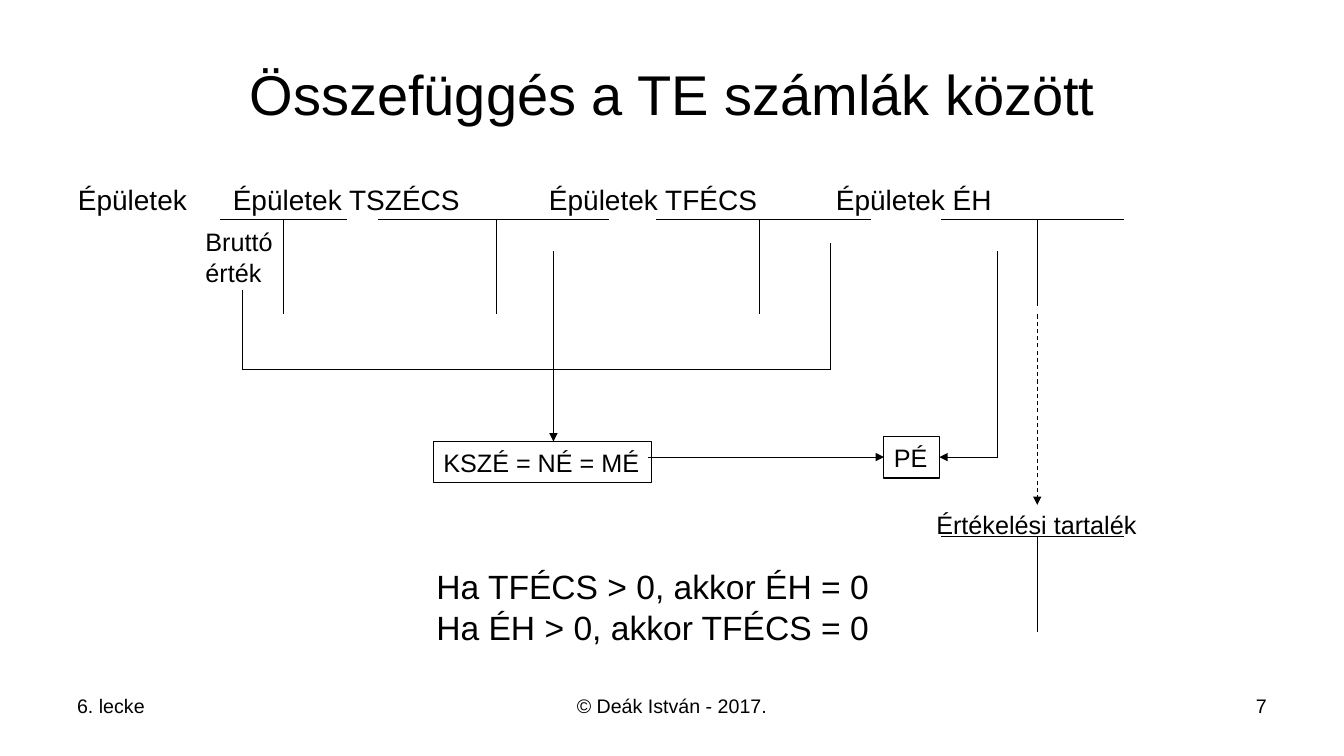
from dataclasses import dataclass

from lxml.etree import SubElement
from pptx import Presentation
from pptx.dml.color import RGBColor
from pptx.enum.dml import MSO_LINE_DASH_STYLE as Dash
from pptx.enum.shapes import MSO_CONNECTOR as Connector, MSO_SHAPE as Shape
from pptx.enum.text import MSO_ANCHOR as Anchor, PP_ALIGN as Align
from pptx.oxml.ns import qn
from pptx.util import Pt

COLORS = {"ink": "000000", "paper": "FFFFFF"}
FONT = "Arial"
INK = RGBColor.from_string(COLORS["ink"])


@dataclass
class Label:
    lines: list[str]
    left: float
    top: float
    width: float
    height: float
    size: float = 18
    align: Align = Align.LEFT
    wrap: bool = False


@dataclass
class Account:
    left: float
    right: float
    top: float
    stem: float
    bottom: float


@dataclass
class Line:
    x1: float
    y1: float
    x2: float
    y2: float
    arrow: bool = False
    dashed: bool = False


def write(shape, lines: list[str], size: float, align: Align, wrap: bool) -> None:
    frame = shape.text_frame
    frame.word_wrap = wrap
    frame.text = "\n".join(lines)
    for paragraph in frame.paragraphs:
        paragraph.alignment = align
        paragraph.font.size = Pt(size)
        paragraph.font.name = FONT
        paragraph.font.color.rgb = INK


def add_label(slide, label: Label, framed: bool = False):
    area = [Pt(v) for v in (label.left, label.top, label.width, label.height)]
    if framed:
        shape = slide.shapes.add_shape(Shape.RECTANGLE, *area)
        shape.shadow.inherit = False
        shape.fill.background()
        shape.line.color.rgb = INK
        shape.line.width = Pt(0.75)
    else:
        shape = slide.shapes.add_textbox(*area)
    write(shape, label.lines, label.size, label.align, label.wrap)
    return shape


def add_line(slide, line: Line):
    ends = [Pt(v) for v in (line.x1, line.y1, line.x2, line.y2)]
    connector = slide.shapes.add_connector(Connector.STRAIGHT, *ends)
    connector.line.color.rgb = INK
    connector.line.width = Pt(0.75)
    if line.dashed:
        connector.line.dash_style = Dash.DASH
    if line.arrow:
        SubElement(connector.line._get_or_add_ln(), qn("a:tailEnd"), type="triangle")
    SubElement(connector._element.spPr, qn("a:effectLst"))
    return connector


def add_account(slide, account: Account) -> None:
    add_line(slide, Line(account.left, account.top, account.right, account.top))
    add_line(slide, Line(account.stem, account.top, account.stem, account.bottom))


BAR = 157        # top bar of the T accounts
BRACKET = 264    # line that joins the three balances
FLOW = 326.5     # height of the arrows into PÉ

HEADINGS = [
    Label(["Épületek"], 48.5, 127, 110, 31, 20, wrap=True),
    Label(["Épületek TSZÉCS"], 159.2, 127, 200, 31, 20, wrap=True),
    Label(["Épületek TFÉCS"], 385, 127, 190, 31, 20, wrap=True),
    Label(["Épületek ÉH"], 590, 127, 160, 31, 20, wrap=True),
]
ACCOUNTS = [
    Account(157, 247.7, BAR, 202.3, 224.6),
    Account(270, 434.9, BAR, 355, 224.6),
    Account(468.7, 622, BAR, 542.2, 224.6),
    Account(672.5, 802.8, BAR, 740.9, 218.9),
    Account(672.5, 802.8, 383.2, 740.9, 451.4),
]
NOTES = [
    Label(["Bruttó", "érték"], 139.7, 158.4, 62.6, 50.4),
    Label(["Értékelési tartalék"], 661.7, 360, 157.7, 29),
    Label(["Ha TFÉCS > 0, akkor ÉH = 0", "Ha ÉH > 0, akkor TFÉCS = 0"],
          304.6, 401, 326.2, 65.5, 24),
]
FOOTERS = [
    Label(["6. lecke"], 48, 491.8, 224, 37.5, 14, wrap=True),
    Label(["© Deák István - 2017."], 328, 491.8, 304, 37.5, 14, Align.CENTER, True),
    Label(["7"], 688, 491.8, 224, 37.5, 14, Align.RIGHT, True),
]
LINES = [
    Line(173.5, 207.4, 173.5, BRACKET),
    Line(395.3, 179.3, 395.3, BRACKET),
    Line(173.5, BRACKET, 593.3, BRACKET),
    Line(593.3, BRACKET, 593.3, 173.5),
    Line(395.3, BRACKET, 395.3, 315.4, arrow=True),
    Line(712.8, 179.3, 712.8, FLOW),
    Line(740.9, 224.6, 740.9, 360.7, arrow=True, dashed=True),
]
NET_VALUE = Label(["KSZÉ = NÉ = MÉ"], 309.6, 315.4, 155.5, 29.5)
MARKET_VALUE = Label(["PÉ"], 631.4, FLOW - 15, 39.6, 30)


def main() -> None:
    deck = Presentation()
    deck.slide_width, deck.slide_height = Pt(960), Pt(540)
    slide = deck.slides.add_slide(deck.slide_layouts[5])
    slide.background.fill.solid()
    slide.background.fill.fore_color.rgb = RGBColor.from_string(COLORS["paper"])

    # Title
    title = slide.shapes.title
    title.left, title.top, title.width, title.height = Pt(48), Pt(21.6), Pt(864), Pt(90)
    title.text_frame.vertical_anchor = Anchor.MIDDLE
    write(title, ["Összefüggés a TE számlák között"], 40, Align.CENTER, True)

    # Accounts and texts
    for label in HEADINGS + NOTES + FOOTERS:
        add_label(slide, label)
    for account in ACCOUNTS:
        add_account(slide, account)

    # Links between the accounts
    for line in LINES:
        add_line(slide, line)

    # Value boxes and the arrows into PÉ
    add_label(slide, NET_VALUE, framed=True)
    market_value = add_label(slide, MARKET_VALUE, framed=True)
    from_net = add_line(slide, Line(463, FLOW, 631.4, FLOW, arrow=True))
    from_net.end_connect(market_value, 1)
    from_correction = add_line(slide, Line(712.8, FLOW, 671, FLOW, arrow=True))
    from_correction.end_connect(market_value, 3)

    deck.save("out.pptx")


if __name__ == "__main__":
    main()
